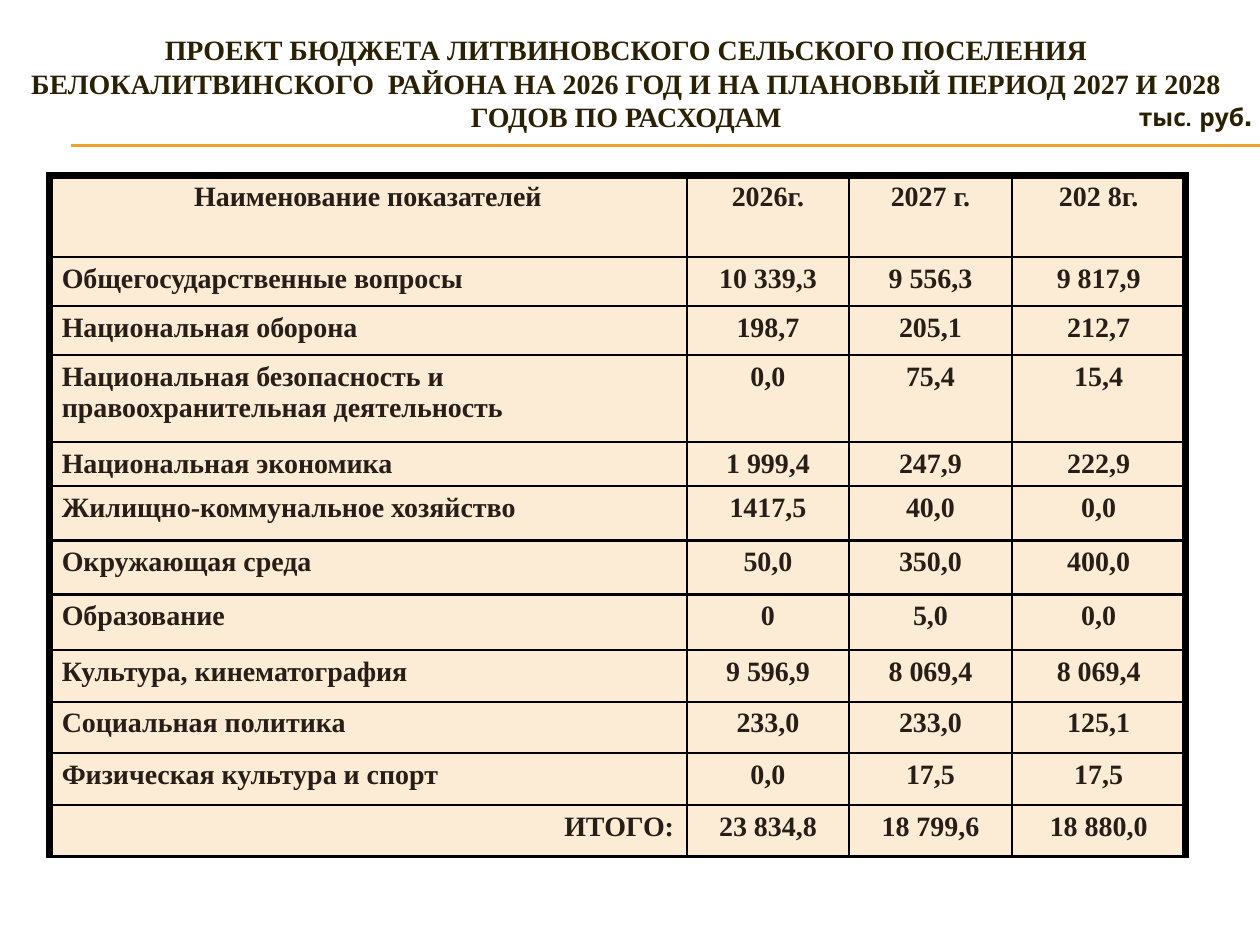
from lxml import etree
from pptx import Presentation
from pptx.dml.color import RGBColor
from pptx.enum.shapes import MSO_CONNECTOR
from pptx.enum.text import MSO_ANCHOR, PP_ALIGN
from pptx.oxml.ns import qn
from pptx.util import Inches, Pt

LEFT, CENTER, RIGHT = PP_ALIGN.LEFT, PP_ALIGN.CENTER, PP_ALIGN.RIGHT
COLORS = {"title": "2A2003", "text": "271E18", "cell": "FCECD5",
          "border": "000000", "rule": "F0A22E"}
SERIF, SANS = "Times New Roman", "Cabin"
THICK, THIN = 4.5, 1.5

# Content
TITLE = ("ПРОЕКТ БЮДЖЕТА ЛИТВИНОВСКОГО СЕЛЬСКОГО ПОСЕЛЕНИЯ БЕЛОКАЛИТВИНСКОГО  "
         "РАЙОНА НА 2026 ГОД И НА ПЛАНОВЫЙ ПЕРИОД 2027 И 2028 ГОДОВ ПО РАСХОДАМ")
UNIT = [("тыс.", 14), (" ", 20), ("руб", 14), (".", 20)]
ROWS = [
    ("Наименование показателей", "2026г.", "2027 г.", "202 8г."),
    ("Общегосударственные вопросы", "10 339,3", "9 556,3", "9 817,9"),
    ("Национальная оборона", "198,7", "205,1", "212,7"),
    ("Национальная безопасность и правоохранительная деятельность", "0,0", "75,4", "15,4"),
    ("Национальная экономика", "1 999,4", "247,9", "222,9"),
    ("Жилищно-коммунальное хозяйство", "1417,5", "40,0", "0,0"),
    ("Окружающая среда", "50,0", "350,0", "400,0"),
    ("Образование", "0", "5,0", "0,0"),
    ("Культура, кинематография", "9 596,9", "8 069,4", "8 069,4"),
    ("Социальная политика", "233,0", "233,0", "125,1"),
    ("Физическая культура и спорт", "0,0", "17,5", "17,5"),
    ("ИТОГО:", "23 834,8", "18 799,6", "18 880,0"),
]
COL_WIDTHS = [5.06, 1.29, 1.29, 1.38]
ROW_HEIGHTS = [0.65, 0.39, 0.39, 0.69, 0.35, 0.43, 0.43, 0.44, 0.41, 0.41, 0.41, 0.41]


def rgb(name):
    return RGBColor.from_string(COLORS[name])


def set_font(font, name, color, size=None):
    font.name, font.bold = name, True
    font.color.rgb = rgb(color)
    if size:
        font.size = Pt(size)


def set_borders(cell, widths):
    """Draw the cell borders; they must come before the fill in tcPr."""
    tc_pr = cell._tc.get_or_add_tcPr()
    for i, (side, width) in enumerate(widths.items()):
        ln = etree.Element(qn(f"a:ln{side}"), w=str(Pt(width)))
        fill = etree.SubElement(ln, qn("a:solidFill"))
        etree.SubElement(fill, qn("a:srgbClr"), val=COLORS["border"])
        tc_pr.insert(i, ln)


prs = Presentation()
prs.slide_width, prs.slide_height = Inches(10), Inches(7.5)
s = prs.slides.add_slide(prs.slide_layouts[5])

# Double rule under the title
for y in (1.15, 1.16):
    rule = s.shapes.add_connector(MSO_CONNECTOR.STRAIGHT, Inches(0.56), Inches(y),
                                  Inches(10), Inches(y))
    rule.line.color.rgb = rgb("rule")
    rule.line.width = Pt(0.75)
    etree.SubElement(rule._element.spPr, qn("a:effectLst"))

# Title
title = s.shapes.title
title.left, title.top = Inches(-0.03), Inches(0.19)
title.width, title.height = Inches(10), Inches(0.94)
tf = title.text_frame
tf.text = TITLE
tf.vertical_anchor = MSO_ANCHOR.MIDDLE
p = tf.paragraphs[0]
p.alignment = CENTER
set_font(p.font, SERIF, "title", 16)

# Budget table
table = s.shapes.add_table(len(ROWS), len(COL_WIDTHS), Inches(0.39), Inches(1.39),
                           Inches(sum(COL_WIDTHS)), Inches(sum(ROW_HEIGHTS))).table
for col, width in zip(table.columns, COL_WIDTHS):
    col.width = Inches(width)
for row, height in zip(table.rows, ROW_HEIGHTS):
    row.height = Inches(height)

last_row, last_col = len(ROWS) - 1, len(COL_WIDTHS) - 1
for r, values in enumerate(ROWS):
    for c, value in enumerate(values):
        cell = table.cell(r, c)
        cell.text = value
        cell.fill.solid()
        cell.fill.fore_color.rgb = rgb("cell")
        p = cell.text_frame.paragraphs[0]
        if c > 0 or r == 0:
            p.alignment = CENTER
        else:
            p.alignment = RIGHT if r == last_row else LEFT
        set_font(p.font, SERIF, "text", 16)
        set_borders(cell, {"L": THICK if c == 0 else THIN,
                           "R": THICK if c == last_col else THIN,
                           "T": THICK if r == 0 else THIN,
                           "B": THIN})

# Unit label
unit = s.shapes.add_textbox(Inches(8.94), Inches(0.68), Inches(1.48), Inches(0.44))
tf = unit.text_frame
tf.word_wrap = True
p = tf.paragraphs[0]
set_font(p.font, SANS, "title")
for text, size in UNIT:
    run = p.add_run()
    run.text = text
    run.font.size = Pt(size)

prs.save("out.pptx")
